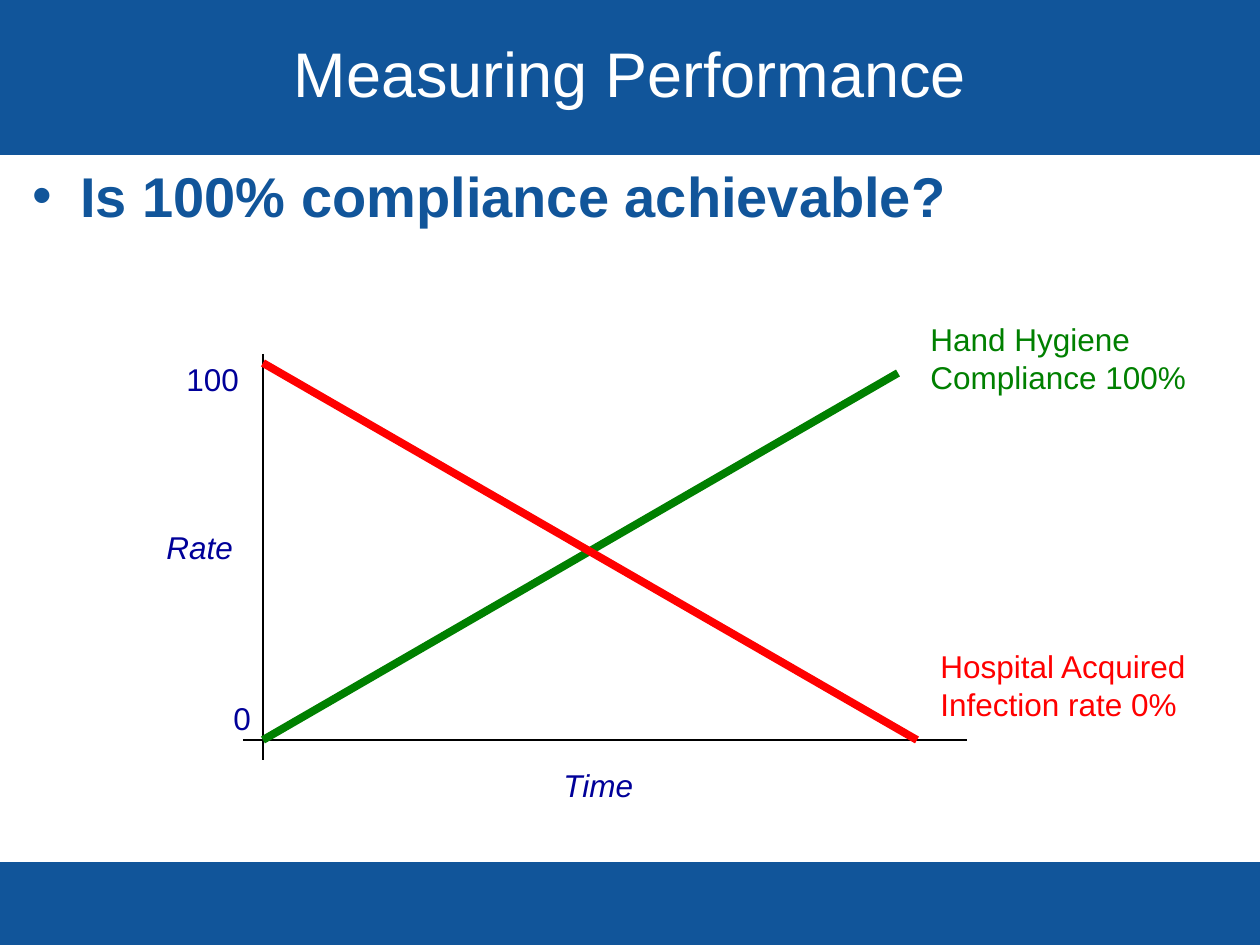
from dataclasses import dataclass

from lxml import etree
from pptx import Presentation
from pptx import util as u
from pptx.dml.color import RGBColor
from pptx.enum import shapes, text
from pptx.oxml.ns import qn


@dataclass(frozen=True)
class Theme:
    font: str = "Arial"
    blue: str = "11559A"
    white: str = "FFFFFF"
    navy: str = "000099"
    green: str = "008000"
    red: str = "FF0000"
    black: str = "000000"
    title: int = 36
    body: int = 32
    label: int = 18
    axis: float = 0.75
    trend: float = 4.5


@dataclass(frozen=True)
class Line:
    x1: int
    y1: int
    x2: int
    y2: int
    color: str
    weight: float


@dataclass(frozen=True)
class Label:
    x: int
    y: int
    w: int
    h: int
    lines: tuple[str, ...]
    color: str
    italic: bool = False


T = Theme()
W, H = 1260, 945
HEADER_H, FOOTER_Y = 155, 862
ORIGIN_X, ORIGIN_Y = 263, 740

LINES = (
    Line(ORIGIN_X, 354, ORIGIN_X, 760, T.black, T.axis),
    Line(243, ORIGIN_Y, 967, ORIGIN_Y, T.black, T.axis),
    Line(ORIGIN_X, ORIGIN_Y, 898, 373, T.green, T.trend),
    Line(ORIGIN_X, 363, 917, ORIGIN_Y, T.red, T.trend),
)
LABELS = (
    Label(174, 354, 78, 50, ("100",), T.navy),
    Label(221, 693, 43, 50, ("0",), T.navy),
    Label(551, 760, 96, 50, ("Time",), T.navy, True),
    Label(154, 522, 92, 50, ("Rate",), T.navy, True),
    Label(928, 641, 281, 88, ("Hospital Acquired", "Infection rate 0%"), T.red),
    Label(918, 314, 281, 88, ("Hand Hygiene", "Compliance 100%"), T.green),
)


def px(n: int) -> u.Emu:
    return u.Emu(round(n * 914400 / 126))


def style(p, size: int, color: str, bold: bool = False, italic: bool = False) -> None:
    f = p.font
    f.name, f.size, f.bold, f.italic = T.font, u.Pt(size), bold, italic
    f.color.rgb = RGBColor.from_string(color)


def add_band(s, y: int, h: int) -> None:
    sp = s.shapes.add_shape(shapes.MSO_SHAPE.RECTANGLE, 0, px(y), px(W), px(h))
    sp.shadow.inherit = False
    sp.fill.solid()
    sp.fill.fore_color.rgb = RGBColor.from_string(T.blue)
    sp.line.fill.background()
    s.shapes._spTree.insert(2, sp._element)  # behind the title


def set_title(s, words: str) -> None:
    sp = s.shapes.title
    sp.left, sp.top, sp.width, sp.height = px(0), px(0), px(W), px(145)
    tf = sp.text_frame
    tf.text = words
    tf.auto_size = text.MSO_AUTO_SIZE.NONE
    tf.vertical_anchor = text.MSO_ANCHOR.MIDDLE
    p = tf.paragraphs[0]
    p.alignment = text.PP_ALIGN.CENTER
    style(p, T.title, T.white)


def add_bullet(s, words: str) -> None:
    sp = s.shapes.add_textbox(px(20), px(HEADER_H), px(1164), px(673))
    tf = sp.text_frame
    tf.word_wrap = True
    p = tf.paragraphs[0]
    p.text = words
    pr = p._p.get_or_add_pPr()
    indent = px(48)
    pr.set("marL", str(indent))
    pr.set("indent", str(-indent))
    etree.SubElement(pr, qn("a:buFont"), typeface=T.font)
    etree.SubElement(pr, qn("a:buChar"), char="•")
    style(p, T.body, T.blue, bold=True)


def add_line(s, line: Line) -> None:
    c = s.shapes.add_connector(shapes.MSO_CONNECTOR.STRAIGHT, px(line.x1),
                               px(line.y1), px(line.x2), px(line.y2))
    c.line.color.rgb = RGBColor.from_string(line.color)
    c.line.width = u.Pt(line.weight)
    etree.SubElement(c._element.spPr, qn("a:effectLst"))


def add_label(s, label: Label) -> None:
    sp = s.shapes.add_textbox(px(label.x), px(label.y), px(label.w), px(label.h))
    tf = sp.text_frame
    tf.word_wrap = False
    tf.auto_size = text.MSO_AUTO_SIZE.SHAPE_TO_FIT_TEXT
    tf.text = "\n".join(label.lines)
    for p in tf.paragraphs:
        style(p, T.label, label.color, italic=label.italic)


def main() -> None:
    prs = Presentation()
    prs.slide_width, prs.slide_height = px(W), px(H)
    s = prs.slides.add_slide(prs.slide_layouts[5])

    # Header, footer and heading text
    add_band(s, 0, HEADER_H)
    add_band(s, FOOTER_Y, H - FOOTER_Y)
    set_title(s, "Measuring Performance")
    add_bullet(s, "Is 100% compliance achievable?")

    # Axes, trends and their labels
    for line in LINES:
        add_line(s, line)
    for label in LABELS:
        add_label(s, label)

    prs.save("out.pptx")


if __name__ == "__main__":
    main()
